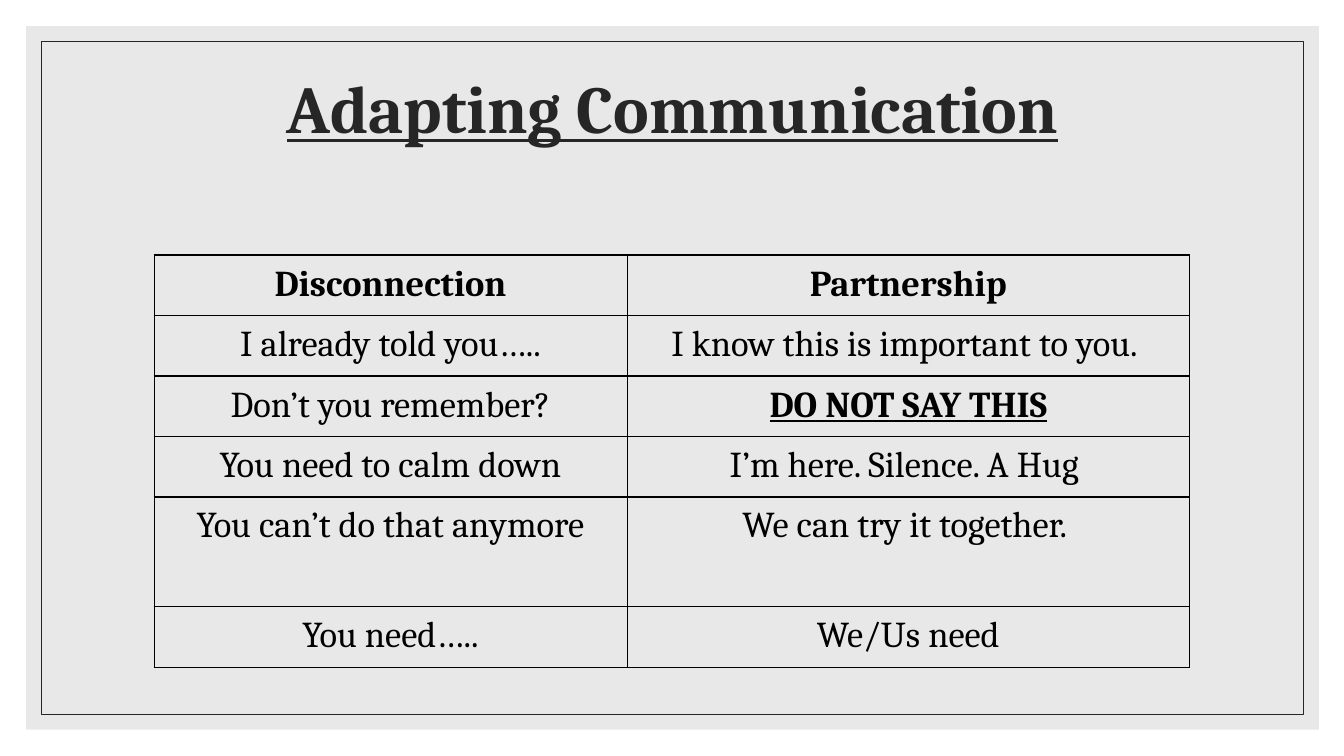
from dataclasses import dataclass

from lxml import etree
from pptx import Presentation
from pptx import util as u
from pptx.dml import color
from pptx.enum import shapes, text
from pptx.oxml import ns

Inches = u.Inches


@dataclass(frozen=True)
class Theme:
    font: str = "Cambria"
    paper: str = "FFFFFF"
    panel: str = "D9D9D9"
    dark: str = "262626"
    ink: str = "000000"
    head: int = 48
    body: int = 26


THEME = Theme()
COLS = (4.69, 5.58)
ROWS = (0.6, 0.6, 0.6, 0.6, 1.09, 0.6)
PHRASES = (
    ("Disconnection", "Partnership"),
    ("I already told you…..", "I know this is important to you. "),
    ("Don’t you remember?", "DO NOT SAY THIS"),
    ("You need to calm down", "I’m here. Silence. A Hug "),
    ("You can’t do that anymore", "We can try it together. "),
    ("You need…..", "We/Us need"),
)
STRONG = "DO NOT SAY THIS"


def rgb(code):
    return color.RGBColor.from_string(code)


def write(frame, words, size, ink, bold=False, under=False, space=1.0, after=0):
    para = frame.paragraphs[0]
    para.alignment = text.PP_ALIGN.CENTER
    para.line_spacing = space
    para.space_before = u.Pt(0)
    para.space_after = u.Pt(after)
    run = para.add_run()
    run.text = words
    run.font.name = THEME.font
    run.font.size = u.Pt(size)
    run.font.bold = bold
    run.font.underline = under
    run.font.color.rgb = rgb(ink)


def add_box(slide, left, top, width, height, fill=None, alpha=100, line=None):
    box = slide.shapes.add_shape(
        shapes.MSO_SHAPE.RECTANGLE,
        Inches(left), Inches(top), Inches(width), Inches(height))
    box.shadow.inherit = False
    if fill:
        box.fill.solid()
        box.fill.fore_color.rgb = rgb(fill)
        tint = box.element.spPr.find(".//" + ns.qn("a:srgbClr"))
        etree.SubElement(tint, ns.qn("a:alpha"), val=str(alpha * 1000))
    else:
        box.fill.background()
    if line:
        box.line.color.rgb = rgb(line)
        box.line.width = u.Pt(0.5)
    else:
        box.line.fill.background()


def add_title(slide, words):
    title = slide.shapes.title
    title.left, title.top = Inches(1.17), Inches(0.7)
    title.width, title.height = Inches(11), Inches(1.5)
    frame = title.text_frame
    frame.word_wrap = True
    frame.auto_size = text.MSO_AUTO_SIZE.NONE
    frame.vertical_anchor = text.MSO_ANCHOR.TOP
    write(frame, words, THEME.head, THEME.dark, bold=True, under=True, space=0.9)
    title.element.getparent().append(title.element)


def add_edges(cell):
    props = cell._tc.get_or_add_tcPr()
    for place, side in enumerate(("a:lnL", "a:lnR", "a:lnT", "a:lnB")):
        edge = etree.Element(ns.qn(side), w=str(u.Pt(1)))
        fill = etree.SubElement(edge, ns.qn("a:solidFill"))
        etree.SubElement(fill, ns.qn("a:srgbClr"), val=THEME.ink)
        props.insert(place, edge)


def fill_cell(cell, words, bold, under):
    cell.margin_left = cell.margin_right = Inches(0.16)
    cell.margin_top, cell.margin_bottom = Inches(0.02), Inches(0)
    cell.vertical_anchor = text.MSO_ANCHOR.TOP
    cell.fill.background()
    add_edges(cell)
    write(cell.text_frame, words, THEME.body, THEME.ink,
          bold=bold, under=under, space=1.15, after=8)


def add_grid(slide, left, top):
    grid = slide.shapes.add_table(
        len(ROWS), len(COLS), Inches(left), Inches(top),
        Inches(sum(COLS)), Inches(sum(ROWS))).table
    grid.horz_banding = False
    for col, width in zip(grid.columns, COLS):
        col.width = Inches(width)
    for row, height in zip(grid.rows, ROWS):
        row.height = Inches(height)
    for r, pair in enumerate(PHRASES):
        for c, words in enumerate(pair):
            strong = words == STRONG
            fill_cell(grid.cell(r, c), words, r == 0 or strong, strong)


def main():
    deck = Presentation()
    deck.slide_width, deck.slide_height = Inches(13.33), Inches(7.5)
    slide = deck.slides.add_slide(deck.slide_layouts.get_by_name("Title Only"))
    slide.background.fill.solid()
    slide.background.fill.fore_color.rgb = rgb(THEME.paper)
    add_box(slide, 0.26, 0.26, 12.82, 6.98, fill=THEME.panel, alpha=60)
    add_box(slide, 0.41, 0.41, 12.52, 6.68, line=THEME.dark)
    add_title(slide, "Adapting Communication")
    add_grid(slide, 1.53, 2.53)
    deck.save("out.pptx")


if __name__ == "__main__":
    main()
